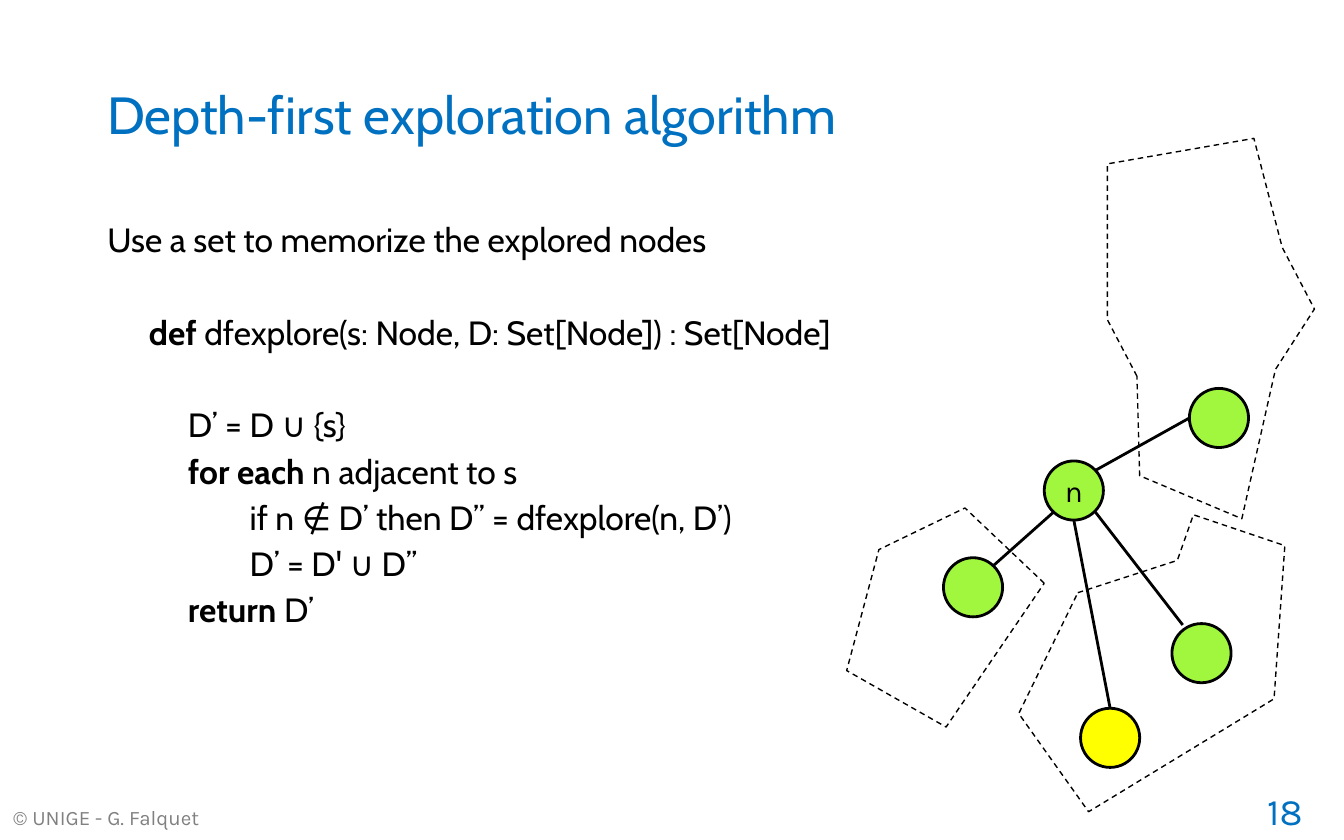
from typing import Any, NamedTuple

from lxml import etree
from pptx import Presentation
from pptx import util as u
from pptx.dml.color import RGBColor
from pptx.enum import dml, shapes, text
from pptx.oxml import ns


# Theme: colours, fonts and type sizes
class Theme(NamedTuple):
    blue: str = "0070C0"
    black: str = "000000"
    white: str = "FFFFFF"
    gray: str = "808080"
    green: str = "A1F73D"
    yellow: str = "FFFF00"
    main: str = "Cabin"
    side: str = "Karla"
    title: int = 28
    body: int = 18
    page: int = 20
    label: int = 16
    foot: int = 11


T = Theme()
SIZE = 0.44  # node diameter
Point = tuple[float, float]


class Style(NamedTuple):
    font: str
    size: int
    color: str


class Line(NamedTuple):
    indent: float
    before: float
    bold: str
    plain: str


class Node(NamedTuple):
    left: float
    top: float
    fill: str
    label: str = ""


class Edge(NamedTuple):
    start: Point
    end: Point


CODE = Style(T.main, T.body, T.black)
GAP, BREAK = 3.2, 28  # spacing above a line, and above a new block

LINES = [
    Line(0, 3.6, "", "Use a set to memorize the explored nodes"),
    Line(0.31, BREAK, "def ", "dfexplore(s: Node, D: Set[Node]) : Set[Node]"),
    Line(0.6, BREAK, "", "D’ = D ∪ {s}"),
    Line(0.6, GAP, "for each", " n adjacent to s"),
    Line(1.06, GAP, "", "if n ∉ D’ then D’’ = dfexplore(n, D’)"),
    Line(1.06, GAP, "", "D’ = D' ∪ D’’"),
    Line(0.6, GAP, "return", " D’"),
]

REGIONS: list[list[Point]] = [
    [(7.77, 4.34), (7.18, 3.78), (6.54, 4.09), (6.3, 4.99), (7.04, 5.41)],
    [(8.02, 4.41), (8.76, 4.17), (8.88, 3.83), (9.56, 4.06), (9.48, 5.2),
     (8.1, 6.04), (7.58, 5.31)],
    [(8.46, 2.8), (8.24, 2.38), (8.24, 1.22), (9.33, 1.03), (9.54, 1.84),
     (9.78, 2.3), (9.49, 2.75), (9.24, 3.86), (8.48, 3.54)],
]

NODES = [
    Node(7.77, 3.43, T.green, "n"),
    Node(7.02, 4.15, T.green),
    Node(8.72, 4.64, T.green),
    Node(8.85, 2.89, T.green),
    Node(8.04, 5.27, T.yellow),
]

EDGES = [
    Edge((8.15, 3.5), (8.85, 3.11)),
    Edge((7.39, 4.21), (7.84, 3.81)),
    Edge((8.8, 4.65), (8.15, 3.81)),
    Edge((7.99, 3.87), (8.26, 5.27)),
]


def apply(target: Any, values: dict[str, Any]) -> None:
    for name, value in values.items():
        setattr(target, name, value)


def write(para: Any, words: str, style: Style, bold: bool = False) -> None:
    run = para.add_run()
    run.text = words
    apply(run.font, {"name": style.font, "size": u.Pt(style.size), "bold": bold})
    run.font.color.rgb = RGBColor.from_string(style.color)


def add_box(slide: Any, left: float, top: float, width: float, height: float,
            anchor: Any = text.MSO_ANCHOR.BOTTOM) -> Any:
    box = slide.shapes.add_textbox(*map(u.Inches, (left, top, width, height)))
    apply(box.text_frame, {"word_wrap": True, "vertical_anchor": anchor})
    return box.text_frame


def paint(shape: Any, fill: str, weight: float) -> None:
    shape.shadow.inherit = False
    shape.fill.solid()
    shape.fill.fore_color.rgb = RGBColor.from_string(fill)
    shape.line.color.rgb = RGBColor.from_string(T.black)
    shape.line.width = u.Pt(weight)


def add_code(slide: Any) -> None:
    frame = add_box(slide, 0.7, 1.58, 8, 3.88, text.MSO_ANCHOR.TOP)
    for i, line in enumerate(LINES):
        para = frame.add_paragraph() if i else frame.paragraphs[0]
        para.space_before = u.Pt(line.before)
        para._p.get_or_add_pPr().set("marL", str(u.Inches(line.indent)))
        if line.bold:
            write(para, line.bold, CODE, True)
        write(para, line.plain, CODE)


def add_region(slide: Any, points: list[Point]) -> None:
    first, *rest = [(u.Inches(x), u.Inches(y)) for x, y in points]
    form = slide.shapes.build_freeform(*first)
    form.add_line_segments(rest, close=True)
    shape = form.convert_to_shape()
    paint(shape, T.white, 0.75)
    shape.line.dash_style = dml.MSO_LINE.DASH


def add_node(slide: Any, node: Node) -> None:
    shape = slide.shapes.add_shape(
        shapes.MSO_SHAPE.OVAL, u.Inches(node.left), u.Inches(node.top),
        u.Inches(SIZE), u.Inches(SIZE))
    paint(shape, node.fill, 1.5)
    if node.label:
        apply(shape.text_frame, {
            "margin_left": 0, "margin_right": 0, "margin_top": 0,
            "margin_bottom": 0, "word_wrap": False,
            "vertical_anchor": text.MSO_ANCHOR.MIDDLE})
        para = shape.text_frame.paragraphs[0]
        para.alignment = text.PP_ALIGN.CENTER
        write(para, node.label, Style(T.side, T.label, T.black))


def add_edge(slide: Any, edge: Edge) -> None:
    link = slide.shapes.add_connector(
        shapes.MSO_CONNECTOR.STRAIGHT, *map(u.Inches, edge.start + edge.end))
    link.line.color.rgb = RGBColor.from_string(T.black)
    link.line.width = u.Pt(1.5)
    etree.SubElement(link._element.spPr, ns.qn("a:effectLst"))


def main() -> None:
    deck = Presentation()
    apply(deck, {"slide_width": u.Inches(10), "slide_height": u.Inches(6.25)})
    slide = deck.slides.add_slide(deck.slide_layouts[6])

    # Title and algorithm
    title = add_box(slide, 0.7, 0.57, 8.19, 0.56)
    write(title.paragraphs[0], "Depth-first exploration algorithm",
          Style(T.main, T.title, T.blue))
    add_code(slide)

    # Graph: regions behind, then nodes and edges
    for points in REGIONS:
        add_region(slide, points)
    for node in NODES:
        add_node(slide, node)
    for edge in EDGES:
        add_edge(slide, edge)

    # Page number and footer
    page = add_box(slide, 7.55, 5.79, 2.24, 0.46).paragraphs[0]
    page.alignment = text.PP_ALIGN.RIGHT
    write(page, "18", Style(T.side, T.page, T.blue))
    foot = add_box(slide, 0, 5.95, 3.25, 0.27)
    write(foot.paragraphs[0], "© UNIGE - G. Falquet",
          Style(T.side, T.foot, T.gray))

    deck.save("out.pptx")


if __name__ == "__main__":
    main()
